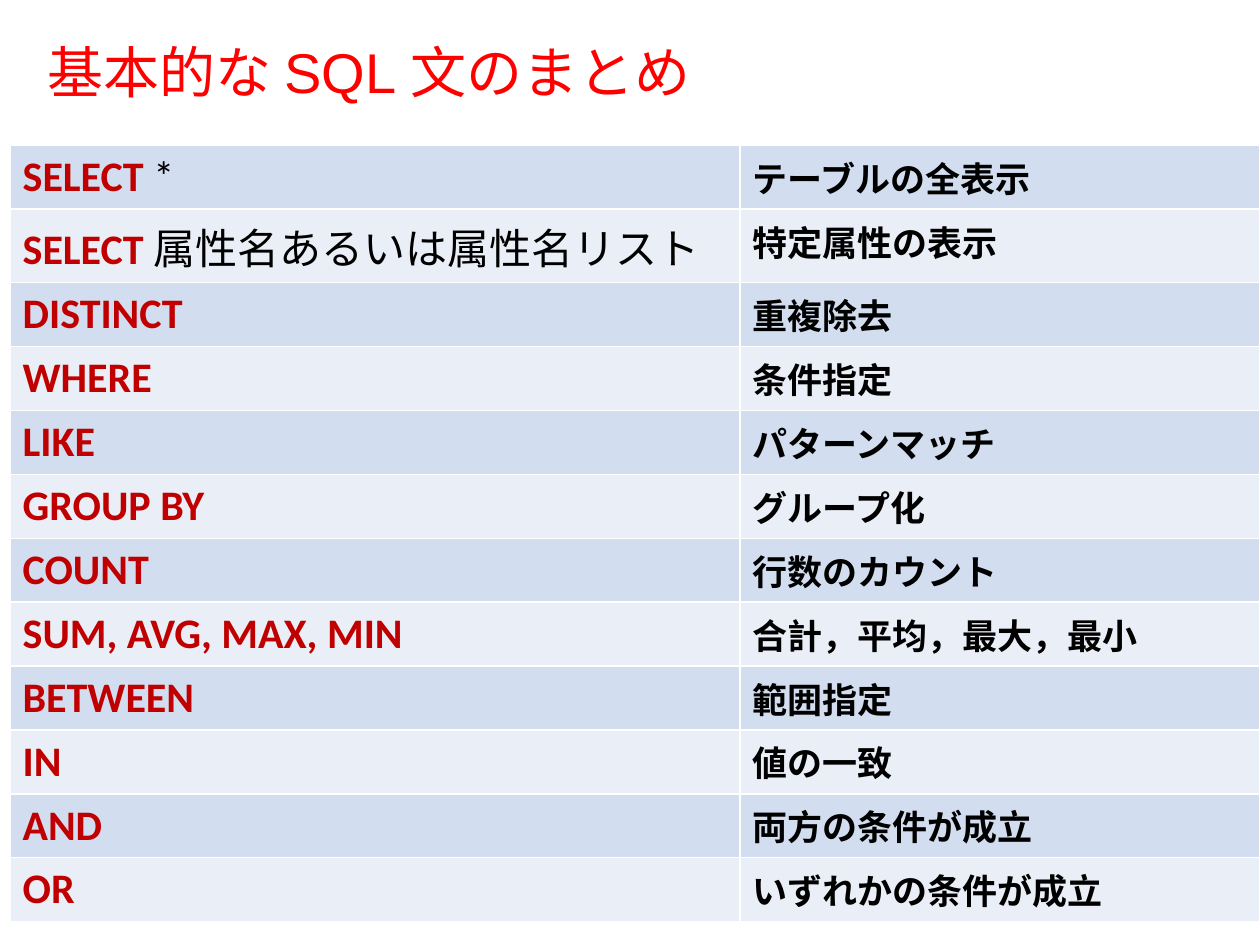
from dataclasses import dataclass

from lxml import etree
from pptx import Presentation
from pptx.dml.color import RGBColor
from pptx.enum import text
from pptx.oxml import ns
from pptx.util import Pt


@dataclass(frozen=True)
class Theme:
    title_font: str = "Arial"
    body_font: str = "Calibri"
    title_size: float = 32
    keyword_size: float = 24
    meaning_size: float = 20
    title: str = "FF0000"
    keyword: str = "C00000"
    ink: str = "000000"
    border: str = "FFFFFF"
    bands: tuple = ("D2DEEF", "EAEFF7")


THEME = Theme()

# keyword, argument after it, meaning
STATEMENTS = [
    ("SELECT", " *", "テーブルの全表示"),
    ("SELECT ", "属性名あるいは属性名リスト", "特定属性の表示"),
    ("DISTINCT", "", "重複除去"),
    ("WHERE", "", "条件指定"),
    ("LIKE", "", "パターンマッチ"),
    ("GROUP BY", "", "グループ化"),
    ("COUNT", "", "行数のカウント"),
    ("SUM, AVG, MAX, MIN", "", "合計，平均，最大，最小"),
    ("BETWEEN", "", "範囲指定"),
    ("IN", "", "値の一致"),
    ("AND", "", "両方の条件が成立"),
    ("OR", "", "いずれかの条件が成立"),
]


def add_span(para, words, font, size, color, bold=False):
    span = para.add_run()
    span.text = words
    span.font.name = font
    span.font.size = Pt(size)
    span.font.bold = bold
    span.font.color.rgb = RGBColor.from_string(color)


def set_borders(cell, color, width):
    properties = cell._tc.get_or_add_tcPr()
    for side in ("lnL", "lnR", "lnT", "lnB"):
        line = etree.SubElement(properties, ns.qn(f"a:{side}"), w=str(Pt(width)))
        fill = etree.SubElement(line, ns.qn("a:solidFill"))
        etree.SubElement(fill, ns.qn("a:srgbClr"), val=color)


def place_title(page, words, left, top, width, height):
    box = page.shapes.title
    box.left, box.top, box.width, box.height = map(Pt, (left, top, width, height))
    frame = box.text_frame
    frame.vertical_anchor = text.MSO_ANCHOR.MIDDLE
    para = frame.paragraphs[0]
    para.alignment = text.PP_ALIGN.LEFT
    para.line_spacing = 0.9
    add_span(para, words, THEME.title_font, THEME.title_size, THEME.title)


def place_statements(page, statements, left, top, width, height, keyword_width):
    table = page.shapes.add_table(
        len(statements), 2, Pt(left), Pt(top), Pt(width), Pt(height)).table
    table.first_row = table.horz_banding = False
    table.columns[0].width = Pt(keyword_width)
    table.columns[1].width = Pt(width - keyword_width)

    for index, (keyword, argument, meaning) in enumerate(statements):
        table.rows[index].height = Pt(height / len(statements))
        cells = table.cell(index, 0), table.cell(index, 1)
        for cell in cells:
            set_borders(cell, THEME.border, 1)
            cell.fill.solid()
            band = THEME.bands[index % len(THEME.bands)]
            cell.fill.fore_color.rgb = RGBColor.from_string(band)

        left_para, right_para = (cell.text_frame.paragraphs[0] for cell in cells)
        add_span(left_para, keyword, THEME.body_font, THEME.keyword_size,
                 THEME.keyword, bold=True)
        if argument:
            add_span(left_para, argument, THEME.body_font, THEME.keyword_size, THEME.ink)
        add_span(right_para, meaning, THEME.body_font, THEME.meaning_size,
                 THEME.ink, bold=True)


def main():
    deck = Presentation()
    deck.slide_width, deck.slide_height = Pt(720), Pt(540)
    page = deck.slides.add_slide(deck.slide_layouts.get_by_name("Title Only"))
    place_title(page, "基本的な SQL 文のまとめ", 20, 11, 666, 64)
    place_statements(page, STATEMENTS, 5.75, 83, 714.25, 432, keyword_width=417)
    deck.save("out.pptx")


if __name__ == "__main__":
    main()
